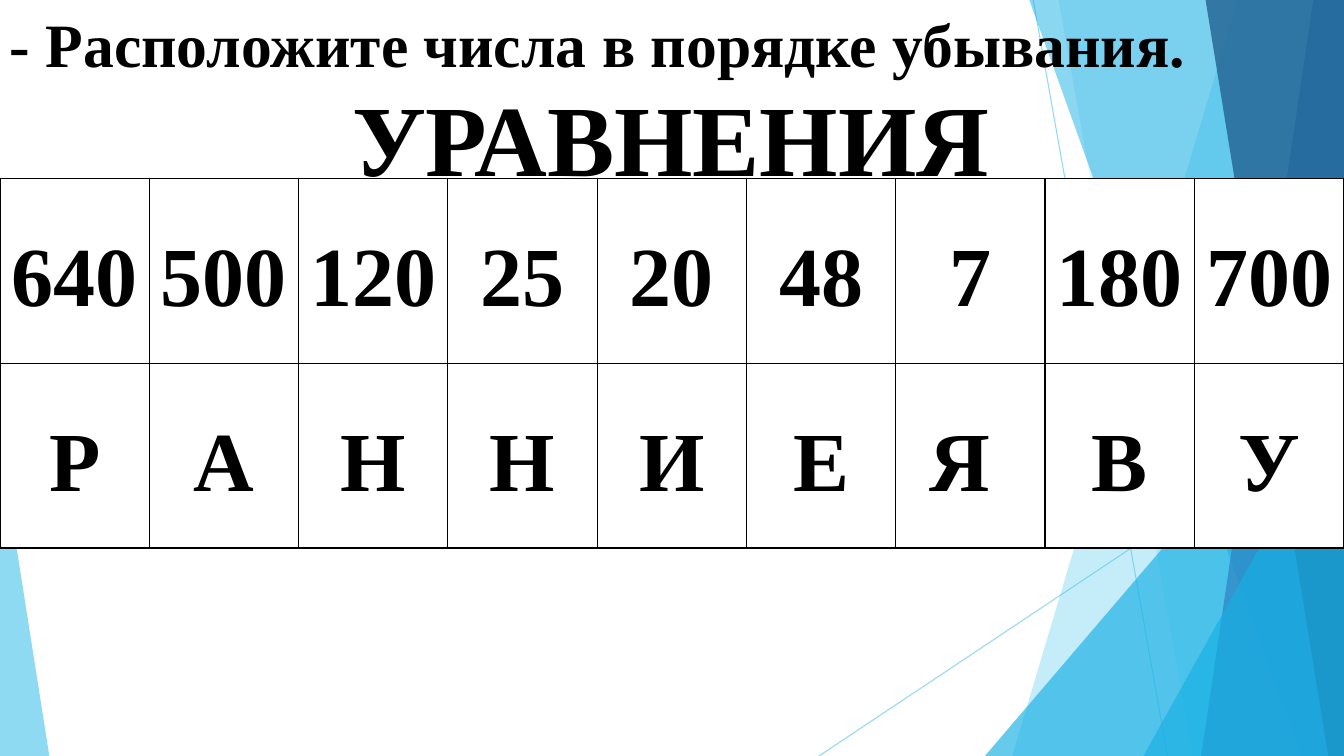
from dataclasses import dataclass

from lxml.etree import SubElement
from pptx import Presentation
from pptx.dml.color import RGBColor
from pptx.enum.shapes import MSO_CONNECTOR, MSO_SHAPE
from pptx.enum.text import MSO_ANCHOR, MSO_AUTO_SIZE, PP_ALIGN
from pptx.oxml.ns import qn
from pptx.slide import Slide
from pptx.text.text import _Paragraph as Paragraph
from pptx.util import Pt

EMU_PER_PX = 9525
WIDTH, HEIGHT = 1280, 720
FONT = "Times New Roman"
BLACK, WHITE = "000000", "FFFFFF"
SKY, AZURE, BLUE, NAVY = "5FCBEF", "17B0E4", "2E83C3", "226292"


@dataclass
class Ray:
    start: tuple[int, int]
    end: tuple[int, int]


@dataclass
class Facet:
    top_x: int
    bottom_x: int
    colour: str
    opacity: int


@dataclass
class Wedge:
    left: int
    top: int
    width: int
    apex: float
    colour: str
    opacity: int


@dataclass
class Caption:
    text: str
    left: int
    top: int
    width: int
    height: int
    size: int
    wrap: bool
    anchor: MSO_ANCHOR
    align: PP_ALIGN
    spacing: float


RAYS = [Ray((984, 0), (1112, 720)), Ray((1280, 387), (780, 720))]
BACKDROP = [
    Facet(1179, 964, SKY, 36),
    Facet(1008, 1136, SKY, 20),
    Wedge(938, 320, 342, 1, AZURE, 66),
    Facet(980, 1239, AZURE, 50),
    Facet(1251, 1144, BLUE, 70),
    Facet(1148, 1265, NAVY, 80),
    Wedge(1089, 377, 191, 1, AZURE, 66),
    Wedge(0, 421, 47, 0, SKY, 70),
]
NUMBERS = ["640", "500", "120", "25", "20", "48", "7", "180", "700"]
LETTERS = ["Р", "А", "Н", "Н", "И", "Е", "Я ", "В", "У"]
CAPTIONS = [
    Caption("- Расположите числа в порядке убывания.", 0, 0, 1164, 81, 44,
            False, MSO_ANCHOR.MIDDLE, PP_ALIGN.LEFT, 1.0),
    Caption("УРАВНЕНИЯ", 117, 50, 1044, 135, 72,
            True, MSO_ANCHOR.TOP, PP_ALIGN.CENTER, 1.15),
]


def px(length: float) -> int:
    return round(length * EMU_PER_PX)


def rgb(colour: str) -> RGBColor:
    return RGBColor.from_string(colour)


def set_opacity(shape, percent: int) -> None:
    for colour in shape.element.spPr.iter(qn("a:srgbClr")):
        SubElement(colour, qn("a:alpha"), val=str(percent * 1000))


def draw_ray(page: Slide, ray: Ray) -> None:
    line = page.shapes.add_connector(
        MSO_CONNECTOR.STRAIGHT, *map(px, ray.start + ray.end))
    line.line.color.rgb = rgb(SKY)
    line.line.width = Pt(0.75)
    set_opacity(line, 70)
    SubElement(line.element.spPr, qn("a:effectLst"))


def draw_backdrop(page: Slide, part: Facet | Wedge) -> None:
    if isinstance(part, Facet):
        builder = page.shapes.build_freeform(px(part.top_x), px(-1))
        corners = [(WIDTH, -1), (WIDTH, HEIGHT), (part.bottom_x, HEIGHT)]
        builder.add_line_segments([(px(x), px(y)) for x, y in corners])
        shape = builder.convert_to_shape()
    else:
        shape = page.shapes.add_shape(
            MSO_SHAPE.ISOSCELES_TRIANGLE, px(part.left), px(part.top),
            px(part.width), px(HEIGHT - part.top))
        shape.adjustments[0] = part.apex
    shape.shadow.inherit = False
    shape.fill.solid()
    shape.fill.fore_color.rgb = rgb(part.colour)
    shape.line.fill.background()
    set_opacity(shape, part.opacity)


def format_text(para: Paragraph, size: int, align: PP_ALIGN, spacing: float) -> None:
    para.alignment = align
    para.line_spacing = spacing
    for span in para.runs:
        span.font.name = FONT
        span.font.size = Pt(size)
        span.font.bold = True
        span.font.color.rgb = rgb(BLACK)


def add_borders(cell) -> None:
    properties = cell._tc.get_or_add_tcPr()
    for side in ("lnL", "lnR", "lnT", "lnB"):
        border = SubElement(properties, qn(f"a:{side}"), w=str(Pt(1)))
        fill = SubElement(border, qn("a:solidFill"))
        SubElement(fill, qn("a:srgbClr"), val=BLACK)


def draw_table(page: Slide, rows: list[list[str]]) -> None:
    columns = len(rows[0])
    table = page.shapes.add_table(
        len(rows), columns, 0, px(170), px(WIDTH), px(352)).table
    table.first_row = False
    table.horz_banding = False
    for column in table.columns:
        column.width = px(WIDTH / columns)
    for row, texts in zip(table.rows, rows):
        row.height = px(176)
        for cell, text in zip(row.cells, texts):
            cell.text_frame.text = text
            cell.vertical_anchor = MSO_ANCHOR.MIDDLE
            cell.margin_left = cell.margin_right = px(7)
            cell.margin_top = cell.margin_bottom = 0
            add_borders(cell)
            cell.fill.solid()
            cell.fill.fore_color.rgb = rgb(WHITE)
            format_text(cell.text_frame.paragraphs[0], 60, PP_ALIGN.CENTER, 1.15)


def draw_caption(page: Slide, caption: Caption) -> None:
    box = page.shapes.add_textbox(
        px(caption.left), px(caption.top), px(caption.width), px(caption.height))
    frame = box.text_frame
    frame.text = caption.text
    frame.word_wrap = caption.wrap
    frame.auto_size = MSO_AUTO_SIZE.SHAPE_TO_FIT_TEXT
    frame.vertical_anchor = caption.anchor
    format_text(frame.paragraphs[0], caption.size, caption.align, caption.spacing)


def main() -> None:
    deck = Presentation()
    deck.slide_width, deck.slide_height = px(WIDTH), px(HEIGHT)
    page = deck.slides.add_slide(deck.slide_layouts[6])
    for ray in RAYS:
        draw_ray(page, ray)
    for part in BACKDROP:
        draw_backdrop(page, part)
    draw_table(page, [NUMBERS, LETTERS])
    for caption in CAPTIONS:
        draw_caption(page, caption)
    deck.save("out.pptx")


if __name__ == "__main__":
    main()
